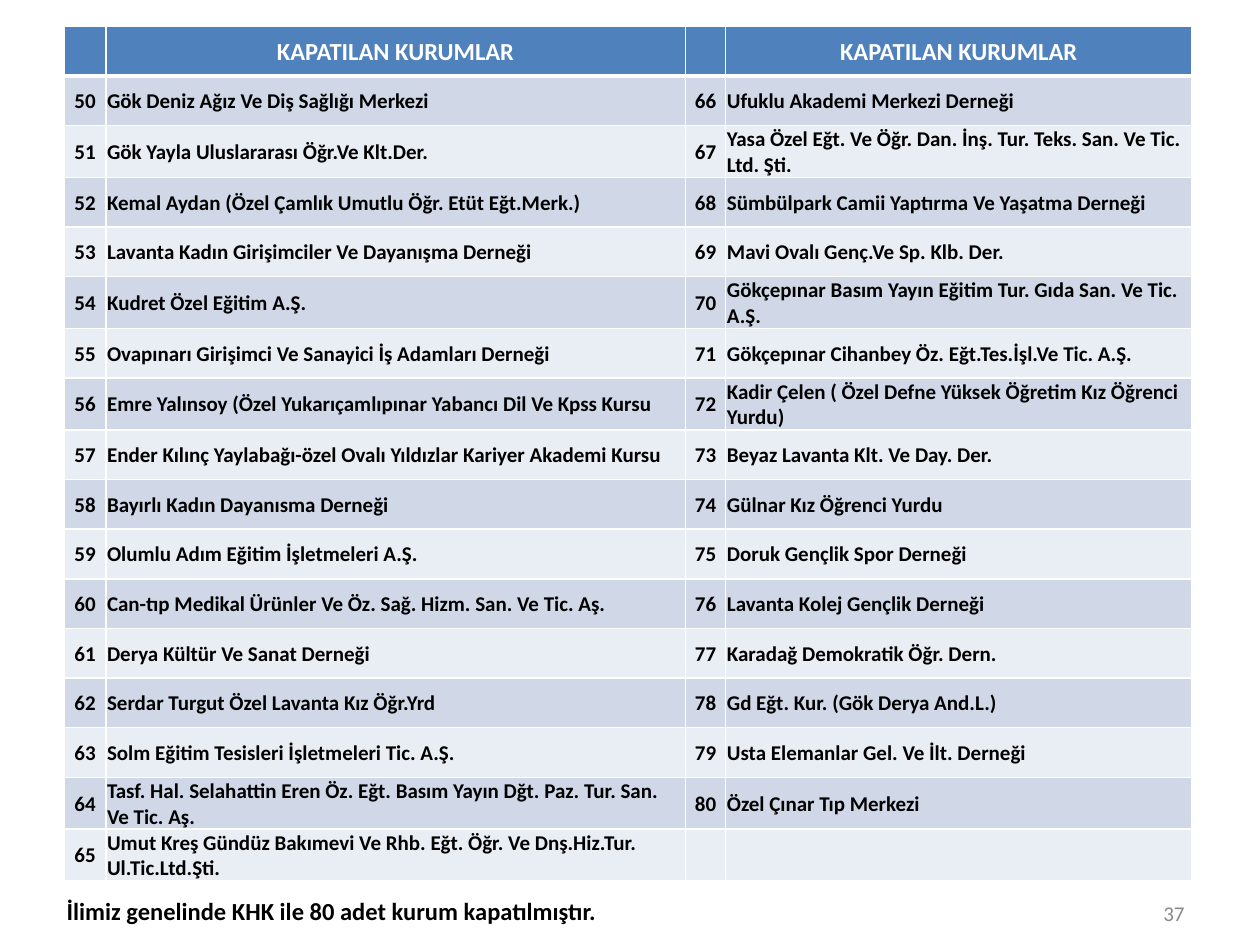
import pptx
import pptx.util
import pptx.dml.color
import pptx.enum.text
import lxml.etree

Inches = pptx.util.Inches
Pt = pptx.util.Pt
ALIGN = pptx.enum.text.PP_ALIGN
ANCHOR = pptx.enum.text.MSO_ANCHOR
DRAWING = "http://schemas.openxmlformats.org/drawingml/2006/main"


def colour(value):
    return pptx.dml.color.RGBColor.from_string(value)


def write(paragraph, text, size, ink, bold, align):
    paragraph.text = text
    paragraph.alignment = align
    paragraph.font.name = "Calibri"
    paragraph.font.size = Pt(size)
    paragraph.font.bold = bold
    paragraph.font.color.rgb = colour(ink)


heading = "KAPATILAN KURUMLAR"
first_number = 50
institutions = [
    "Gök Deniz Ağız Ve Diş Sağlığı Merkezi",
    "Gök Yayla Uluslararası Öğr.Ve Klt.Der.",
    "Kemal Aydan (Özel Çamlık Umutlu Öğr. Etüt Eğt.Merk.)",
    "Lavanta Kadın Girişimciler Ve Dayanışma Derneği",
    "Kudret Özel Eğitim A.Ş.",
    "Ovapınarı Girişimci Ve Sanayici İş Adamları Derneği",
    "Emre Yalınsoy (Özel Yukarıçamlıpınar Yabancı Dil Ve Kpss Kursu",
    "Ender Kılınç Yaylabağı-özel Ovalı Yıldızlar Kariyer Akademi Kursu",
    "Bayırlı Kadın Dayanısma Derneği",
    "Olumlu Adım Eğitim İşletmeleri A.Ş.",
    "Can-tıp Medikal Ürünler Ve Öz. Sağ. Hizm. San. Ve Tic. Aş.",
    "Derya Kültür Ve Sanat Derneği",
    "Serdar Turgut Özel Lavanta Kız Öğr.Yrd",
    "Solm Eğitim Tesisleri İşletmeleri Tic. A.Ş.",
    "Tasf. Hal. Selahattin Eren Öz. Eğt. Basım Yayın Dğt. Paz. Tur. San. Ve Tic. Aş.",
    "Umut Kreş Gündüz Bakımevi Ve Rhb. Eğt. Öğr. Ve Dnş.Hiz.Tur. Ul.Tic.Ltd.Şti.",
    "Ufuklu Akademi Merkezi Derneği",
    "Yasa Özel Eğt. Ve Öğr. Dan. İnş. Tur. Teks. San. Ve Tic. Ltd. Şti.",
    "Sümbülpark Camii Yaptırma Ve Yaşatma Derneği",
    "Mavi Ovalı Genç.Ve Sp. Klb. Der.",
    "Gökçepınar Basım Yayın Eğitim Tur. Gıda San. Ve Tic. A.Ş.",
    "Gökçepınar Cihanbey Öz. Eğt.Tes.İşl.Ve Tic. A.Ş.",
    "Kadir Çelen ( Özel Defne Yüksek Öğretim Kız Öğrenci Yurdu)",
    "Beyaz Lavanta Klt. Ve Day. Der.",
    "Gülnar Kız Öğrenci Yurdu",
    "Doruk Gençlik Spor Derneği",
    "Lavanta Kolej Gençlik Derneği",
    "Karadağ Demokratik Öğr. Dern.",
    "Gd Eğt. Kur. (Gök Derya And.L.)",
    "Usta Elemanlar Gel. Ve İlt. Derneği",
    "Özel Çınar Tıp Merkezi",
]
body_rows = 16

deck = pptx.Presentation()
deck.slide_width = Inches(10)
deck.slide_height = Inches(7.5)
slide = deck.slides.add_slide(deck.slide_layouts[6])

page_number = slide.shapes.add_textbox(Inches(7.17), Inches(7.05), Inches(2.33), Inches(0.4)).text_frame
page_number.word_wrap = True
page_number.vertical_anchor = ANCHOR.MIDDLE
write(page_number.paragraphs[0], "37", 12, "898989", False, ALIGN.RIGHT)

table_height = Inches(6.7)
closures = slide.shapes.add_table(
    body_rows + 1, 4, Inches(0.51), Inches(0.21), Inches(8.95), table_height
).table
for column, width in zip(closures.columns, [0.33, 4.6, 0.32, 3.7]):
    column.width = Inches(width)

entries = [["", heading, "", heading]]
for left in range(body_rows):
    entry = []
    for index in (left, left + body_rows):
        listed = index < len(institutions)
        entry += [str(first_number + index), institutions[index]] if listed else ["", ""]
    entries.append(entry)

for row, entry in enumerate(entries):
    closures.rows[row].height = table_height // len(entries)
    header = row == 0
    band = "4F81BD" if header else "D0D8E8" if row % 2 else "E9EDF4"
    border_widths = {"lnL": 1, "lnR": 1, "lnT": 3 if row == 1 else 1, "lnB": 3 if header else 1}
    for column, text in enumerate(entry):
        cell = closures.cell(row, column)
        cell.vertical_anchor = ANCHOR.MIDDLE
        cell.margin_left = cell.margin_right = cell.margin_top = Inches(0.01)
        cell.margin_bottom = 0
        properties = cell._tc.get_or_add_tcPr()
        for side, width in border_widths.items():
            border = lxml.etree.SubElement(properties, f"{{{DRAWING}}}{side}", w=str(Pt(width)))
            paint = lxml.etree.SubElement(border, f"{{{DRAWING}}}solidFill")
            lxml.etree.SubElement(paint, f"{{{DRAWING}}}srgbClr", val="FFFFFF")
        cell.fill.solid()
        cell.fill.fore_color.rgb = colour(band)
        centred = header or column % 2 == 0
        write(cell.text_frame.paragraphs[0], text, 14 if header else 12,
              "FFFFFF" if header else "000000", True,
              ALIGN.CENTER if centred else ALIGN.LEFT)

summary = slide.shapes.add_textbox(Inches(0.43), Inches(7.06), Inches(4.44), Inches(0.34)).text_frame
summary.word_wrap = False
summary.auto_size = pptx.enum.text.MSO_AUTO_SIZE.SHAPE_TO_FIT_TEXT
write(summary.paragraphs[0], "İlimiz genelinde KHK ile 80 adet kurum kapatılmıştır.",
      14, "000000", True, ALIGN.LEFT)

deck.save("out.pptx")
